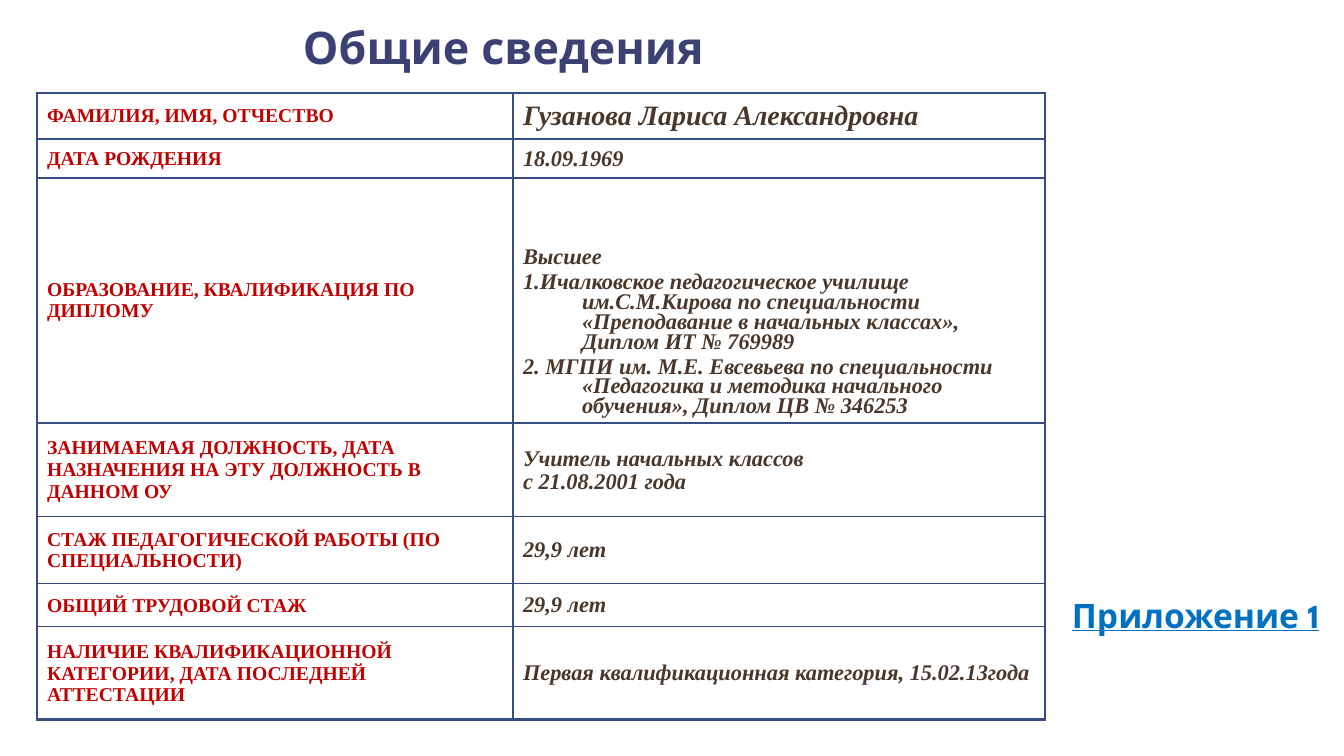
"""Build the slide with a teacher's general information table."""
from lxml.etree import SubElement
from pptx import Presentation
from pptx.dml.color import RGBColor
from pptx.enum.text import MSO_ANCHOR, PP_ALIGN
from pptx.oxml.ns import qn
from pptx.util import Emu, Pt

NAVY = RGBColor(0x3B, 0x41, 0x72)
LINK = RGBColor(0x00, 0x70, 0xC0)
RED = RGBColor(0xC0, 0x00, 0x00)
BROWN = RGBColor(0x4A, 0x37, 0x29)
EDGE = RGBColor(0x37, 0x4C, 0x81)
SERIF, SANS = "Times New Roman", "League Spartan"

HANG = 59
COLS = (476, 532)
ROWS = [
    (46, "ФАМИЛИЯ, ИМЯ, ОТЧЕСТВО", 20, 1, ["Гузанова Лариса Александровна"]),
    (39, "ДАТА РОЖДЕНИЯ", 16, 1, ["18.09.1969"]),
    (245, "ОБРАЗОВАНИЕ, КВАЛИФИКАЦИЯ ПО ДИПЛОМУ", 16, 0.8, [
        "Высшее",
        "1.Ичалковское педагогическое училище им.С.М.Кирова по специальности "
        "«Преподавание в начальных классах», Диплом ИТ № 769989",
        "2. МГПИ им. М.Е. Евсевьева по специальности «Педагогика и методика "
        "начального обучения», Диплом ЦВ № 346253"]),
    (94, "ЗАНИМАЕМАЯ ДОЛЖНОСТЬ, ДАТА НАЗНАЧЕНИЯ НА ЭТУ ДОЛЖНОСТЬ В ДАННОМ ОУ",
     16, 0.7, ["Учитель начальных классов", "с 21.08.2001 года"]),
    (67, "СТАЖ ПЕДАГОГИЧЕСКОЙ РАБОТЫ (ПО СПЕЦИАЛЬНОСТИ)", 16, 1, ["29,9 лет"]),
    (43, "ОБЩИЙ ТРУДОВОЙ СТАЖ", 16, 1, ["29,9 лет"]),
    (93, "НАЛИЧИЕ КВАЛИФИКАЦИОННОЙ КАТЕГОРИИ, ДАТА ПОСЛЕДНЕЙ АТТЕСТАЦИИ",
     16, 1, ["Первая квалификационная категория, 15.02.13года"]),
]
BOXES = [
    ("Общие сведения", (290, 21, 596, 80), 32, NAVY, 0.85, (13, 7), False),
    ("Приложение 1", (1062, 593, 267, 48), 24, LINK, 0.95, (10, 5), True),
]


def px(num):
    """Turn pixels into EMU."""
    return Emu(round(num * 914400 / 100.8))


def style(para, size, color, face):
    """Format every run of a paragraph."""
    for run in para.runs:
        font = run.font
        font.size, font.name, font.bold = Pt(size), face, True
        font.color.rgb = color


def frame(cell, row, col):
    """Draw cell borders, thick along the outside of the table."""
    props = cell._tc.get_or_add_tcPr()
    outer = {"lnL": col == 0, "lnR": col == len(COLS) - 1,
             "lnT": row == 0, "lnB": row == len(ROWS) - 1}
    for tag, thick in outer.items():
        line = SubElement(props, qn("a:" + tag), w=str(Pt(2.25 if thick else 1)))
        fill = SubElement(line, qn("a:solidFill"))
        SubElement(fill, qn("a:srgbClr"), val=str(EDGE))
    cell.fill.background()


def write(cell, lines, size, color, tight=1):
    """Fill a cell with paragraphs."""
    cell.text_frame.text = "\n".join(lines)
    cell.vertical_anchor = MSO_ANCHOR.MIDDLE
    for num, para in enumerate(cell.text_frame.paragraphs):
        style(para, size, color, SERIF)
        if num:
            para.space_before = Pt(size * 0.2)
            para.line_spacing = tight


def add_table(slide):
    """Add the table of labels and values."""
    high = sum(row[0] for row in ROWS)
    table = slide.shapes.add_table(len(ROWS), len(COLS), px(37), px(93),
                                   px(sum(COLS)), px(high)).table
    table.first_row = table.horz_banding = False
    for col, wide in enumerate(COLS):
        table.columns[col].width = px(wide)
    for row, (tall, label, size, tight, lines) in enumerate(ROWS):
        table.rows[row].height = px(tall)
        left, right = table.cell(row, 0), table.cell(row, 1)
        write(left, [label], 14, RED)
        write(right, lines, size, BROWN, tight)
        paras = right.text_frame.paragraphs
        paras[0].alignment = PP_ALIGN.JUSTIFY
        for para in paras:
            para.runs[0].font.italic = True
            if len(paras) > 2:
                right.vertical_anchor = MSO_ANCHOR.BOTTOM
                props = para._p.get_or_add_pPr()
                props.set("marL", str(px(HANG)))
                props.set("indent", str(-px(HANG)))
        frame(left, row, 0)
        frame(right, row, 1)


def add_box(slide, text, place, size, color, space, inset, under):
    """Add one heading box."""
    body = slide.shapes.add_textbox(*map(px, place)).text_frame
    body.word_wrap = True
    body.margin_left = body.margin_right = px(inset[0])
    body.margin_top = body.margin_bottom = px(inset[1])
    body.text = text
    para = body.paragraphs[0]
    para.line_spacing = space
    style(para, size, color, SANS)
    para.runs[0].font.underline = under


def main():
    """Build and save the deck."""
    deck = Presentation()
    deck.slide_width, deck.slide_height = px(1344), px(756)
    slide = deck.slides.add_slide(deck.slide_layouts[6])
    add_table(slide)
    for box in BOXES:
        add_box(slide, *box)
    deck.save("out.pptx")


if __name__ == "__main__":
    main()
